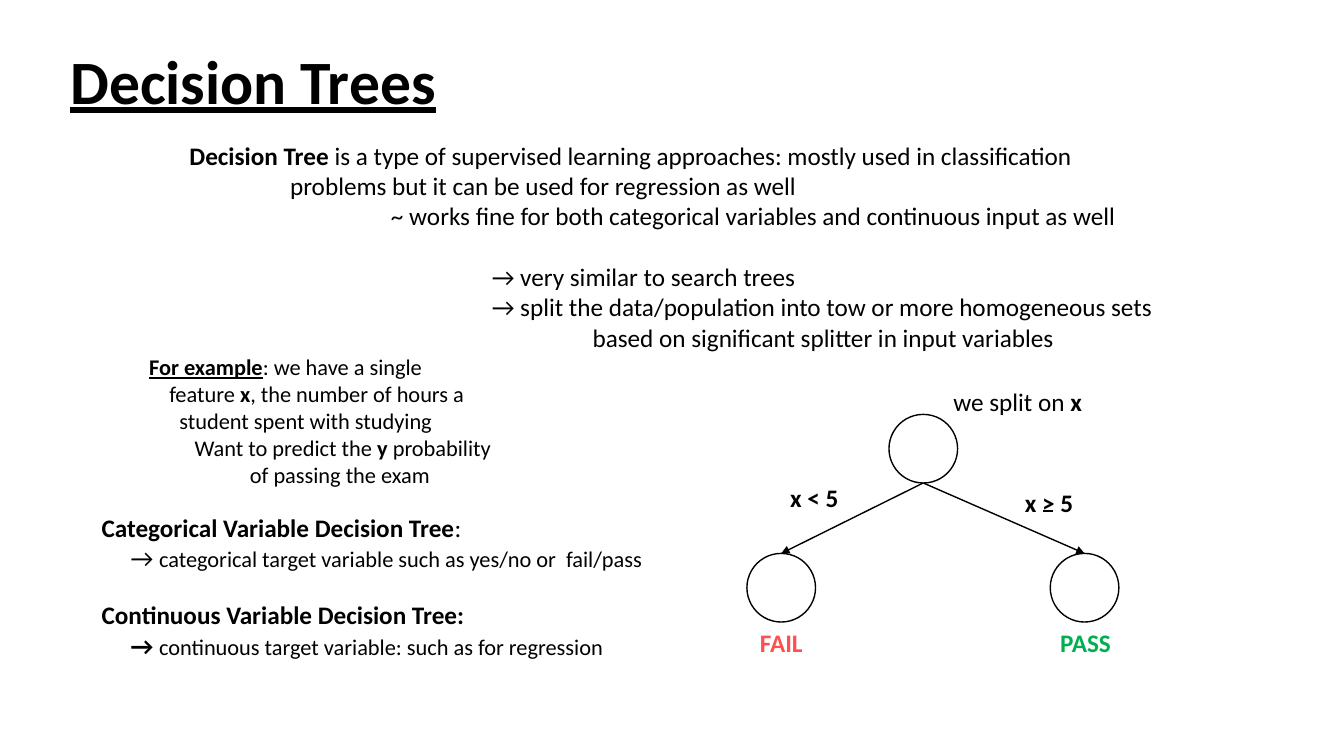
import pptx
import pptx.util
import pptx.dml.color
import pptx.enum.shapes
import pptx.enum.text
import pptx.oxml.ns
import lxml.etree

Pt = pptx.util.Pt
RGBColor = pptx.dml.color.RGBColor
BLACK = RGBColor(0, 0, 0)
WHITE = RGBColor(255, 255, 255)
RED = RGBColor(255, 80, 80)
GREEN = RGBColor(0, 176, 80)

PLAIN = {"name": "Calibri", "size": Pt(18), "bold": False, "underline": False}
SMALL = PLAIN | {"size": Pt(16)}
BOLD = PLAIN | {"bold": True}
STRONG = SMALL | {"bold": True}
LEAD = STRONG | {"underline": True}
HEAD = {"name": "Calibri", "size": Pt(44), "bold": True, "underline": True}

TAB = 72
STEP = 20.7
BIG_GAP = 22
GAP = 19.5

# Each paragraph: indent, space before, runs of (text, format)
TITLE = [(0, 0, [("Decision Trees", HEAD)])]
INTRO = [
    (0, 0, [("Decision Tree ", BOLD),
            ("is a type of supervised learning approaches: mostly used in classification", PLAIN)]),
    (TAB, 0, [("problems but it can be used for regression as well", PLAIN)]),
    (2 * TAB, 0, [("~ works fine for both categorical variables and continuous input as well", PLAIN)]),
    (3 * TAB, BIG_GAP, [("→ very similar to search trees", PLAIN)]),
    (3 * TAB, 0, [("→ split the data/population into tow or more homogeneous sets", PLAIN)]),
    (4 * TAB, 0, [("based on significant splitter in input variables", PLAIN)]),
]
SAMPLE = [
    (0, 0, [("For example", LEAD), (": we have a single", SMALL)]),
    (14.4, 0, [("feature ", SMALL), ("x", STRONG), (", the number of hours a", SMALL)]),
    (21.7, 0, [("student spent with studying", SMALL)]),
    (32.5, 0, [("Want to predict the ", SMALL), ("y", STRONG), (" probability", SMALL)]),
    (TAB, 0, [("of passing the exam", SMALL)]),
]
KINDS = [
    (0, 0, [("Categorical Variable Decision Tree", BOLD), (":", PLAIN)]),
    (STEP, 0, [("→ ", PLAIN), ("categorical target variable such as yes/no or  fail/pass", SMALL)]),
    (0, GAP, [("Continuous Variable Decision Tree:", BOLD)]),
    (STEP, 0, [("→ ", BOLD), ("continuous target variable: such as for regression", SMALL)]),
]
BLOCKS = [
    (43.2, 8, 828, 104.4, TITLE),
    (128.2, 96.5, 715, 160, INTRO),
    (99.4, 249, 265, 106.5, SAMPLE),
    (65.5, 362.2, 410, 114, KINDS),
]
LABELS = [
    (673.9, 272.2, 113, BLACK, [("we split on ", PLAIN), ("x", BOLD)]),
    (557.3, 341.3, 54, BLACK, [("x < 5", BOLD)]),
    (725, 344.2, 54, BLACK, [("x > 5", BOLD)]),
    (535.7, 444.2, 49, RED, [("FAIL", BOLD)]),
    (750.2, 444.2, 55, GREEN, [("PASS", BOLD)]),
]
NODE = 49
ROOT = (635, 296)
LEAVES = [(533.5, 395.3), (750.2, 395.3)]
BAR = (745.2, 365, 752.4, 365)

deck = pptx.Presentation()
deck.slide_width, deck.slide_height = Pt(960), Pt(540)
slide = deck.slides.add_slide(deck.slide_layouts[6])


def style(thing, values):
    for key, value in values.items():
        setattr(thing, key, value)


def write(left, top, width, height, paras, color=BLACK):
    box = slide.shapes.add_textbox(Pt(left), Pt(top), Pt(width), Pt(height))
    frame = box.text_frame
    frame.word_wrap = True
    for i, (indent, gap, runs) in enumerate(paras):
        para = frame.add_paragraph() if i else frame.paragraphs[0]
        para._p.get_or_add_pPr().set("marL", str(Pt(indent)))
        if gap:
            para.space_before = Pt(gap)
        for text, form in runs:
            run = para.add_run()
            run.text = text
            style(run.font, form)
            run.font.color.rgb = color
    return frame


def link(ends, width, arrow=False):
    line = slide.shapes.add_connector(
        pptx.enum.shapes.MSO_CONNECTOR.STRAIGHT, *[Pt(v) for v in ends])
    line.line.color.rgb = BLACK
    line.line.width = Pt(width)
    qn = pptx.oxml.ns.qn
    if arrow:
        lxml.etree.SubElement(line.line._get_or_add_ln(), qn("a:tailEnd"), type="triangle")
    lxml.etree.SubElement(line._element.spPr, qn("a:effectLst"))


def node(left, top):
    ring = slide.shapes.add_shape(
        pptx.enum.shapes.MSO_SHAPE.OVAL, Pt(left), Pt(top), Pt(NODE), Pt(NODE))
    ring.shadow.inherit = False
    ring.fill.solid()
    ring.fill.fore_color.rgb = WHITE
    ring.line.color.rgb = BLACK
    ring.line.width = Pt(1)


frames = [write(*block) for block in BLOCKS]
frames[0].vertical_anchor = pptx.enum.text.MSO_ANCHOR.MIDDLE
frames[0].paragraphs[0].line_spacing = 0.9

half = NODE / 2
for left, top in LEAVES:
    node(left, top)
    link((ROOT[0] + half, ROOT[1] + NODE, left + half, top), 1, True)
node(*ROOT)

for left, top, width, color, runs in LABELS:
    write(left, top, width, 29, [(0, 0, runs)], color)
link(BAR, 1.5)

deck.save("out.pptx")
